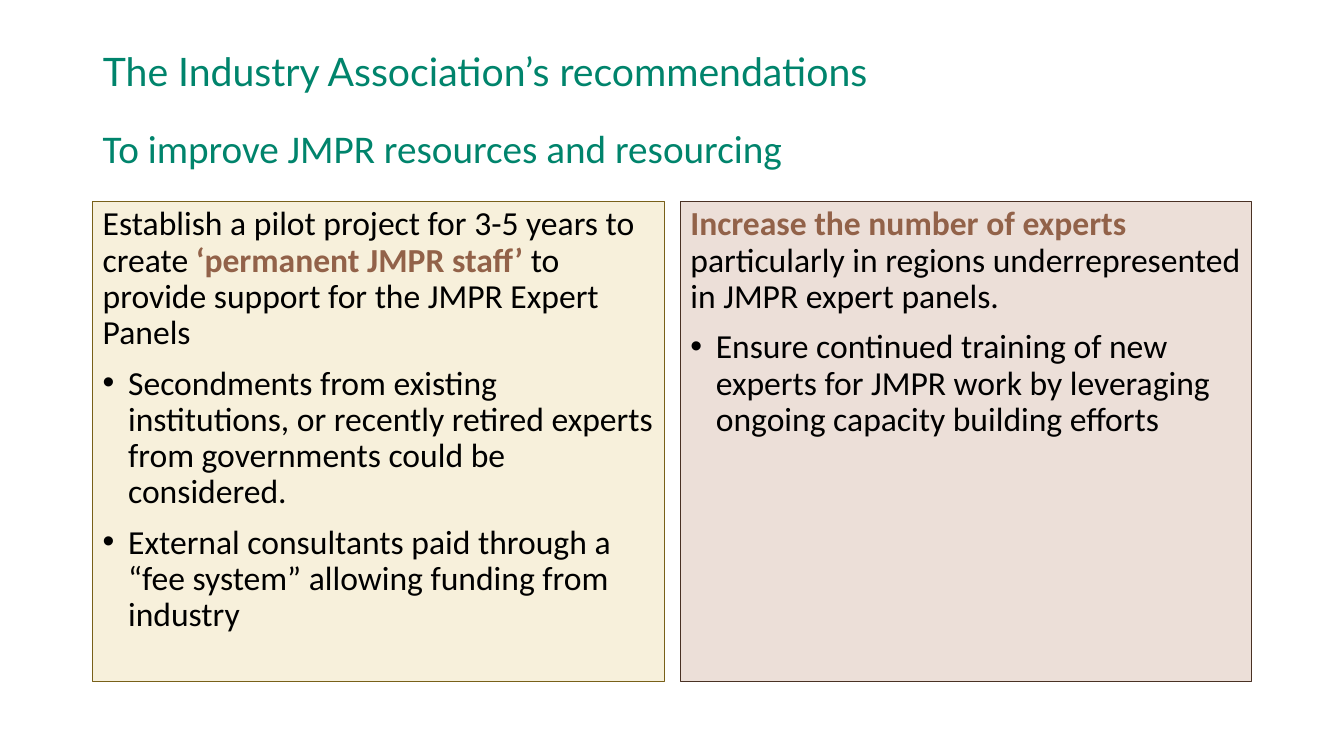
"""Build a slide of recommendations in two coloured panels."""
from dataclasses import dataclass

import lxml.etree
import pptx
import pptx.dml.color
import pptx.enum.shapes
import pptx.enum.text
import pptx.oxml.ns
import pptx.util
from pptx.util import Cm


@dataclass(frozen=True)
class Theme:
    heading_font: str = "Lato"
    body_font: str = "Calibri"
    heading_color: str = "00846C"
    text_color: str = "000000"
    accent_color: str = "926249"
    heading_size: int = 28
    body_size: int = 24
    paragraph_gap: int = 10
    border_width: float = 0.75


@dataclass(frozen=True)
class Run:
    text: str
    accent: bool = False


@dataclass(frozen=True)
class Paragraph:
    runs: tuple[Run, ...]
    bullet: bool = False


@dataclass(frozen=True)
class Panel:
    fill: str
    border: str
    paragraphs: tuple[Paragraph, ...]


THEME = Theme()
LEFT = Cm(2.34)
CONTENT_WIDTH = Cm(29.21)
PANEL_TOP = Cm(5.09)
PANEL_WIDTH = Cm(14.4)
PANEL_HEIGHT = Cm(12.08)
PANEL_STEP = CONTENT_WIDTH - PANEL_WIDTH
BULLET_INDENT = Cm(0.64)

TITLE = "The Industry Association’s recommendations"
SUBTITLE = "To improve JMPR resources and resourcing"
PANELS = (
    Panel("F7F0DB", "786019", (
        Paragraph((
            Run("Establish a pilot project for 3-5 years to create "),
            Run("‘permanent JMPR staff’", accent=True),
            Run(" to provide support for the JMPR Expert Panels"),
        )),
        Paragraph((Run("Secondments from existing institutions, or recently retired "
                       "experts from governments could be considered."),), bullet=True),
        Paragraph((Run("External consultants paid through a “fee system” allowing "
                       "funding from industry"),), bullet=True),
    )),
    Panel("ECDFD8", "493124", (
        Paragraph((
            Run("Increase the number of experts ", accent=True),
            Run("particularly in regions underrepresented in JMPR expert panels."),
        )),
        Paragraph((Run("Ensure continued training of new experts for JMPR work by "
                       "leveraging ongoing capacity building efforts"),), bullet=True),
    )),
)


def rgb(value: str) -> pptx.dml.color.RGBColor:
    """Convert a hexadecimal colour."""
    return pptx.dml.color.RGBColor.from_string(value)


def add_run(paragraph, text: str, font: str, size: int, color: str, bold: bool = False) -> None:
    """Append a formatted run to a paragraph."""
    run = paragraph.add_run()
    run.text = text
    run.font.name = font
    run.font.size = pptx.util.Pt(size)
    run.font.color.rgb = rgb(color)
    run.font.bold = bold


def set_bullet(paragraph) -> None:
    """Give a paragraph a hanging round bullet."""
    properties = paragraph._p.get_or_add_pPr()
    properties.set("marL", str(BULLET_INDENT))
    properties.set("indent", str(-BULLET_INDENT))
    font = lxml.etree.SubElement(properties, pptx.oxml.ns.qn("a:buFont"))
    font.set("typeface", "Arial")
    bullet = lxml.etree.SubElement(properties, pptx.oxml.ns.qn("a:buChar"))
    bullet.set("char", "•")


def add_title(slide) -> None:
    """Place and fill the title placeholder."""
    title = slide.shapes.title
    title.left, title.top, title.width, title.height = LEFT, Cm(0.89), Cm(22.96), Cm(1.93)
    frame = title.text_frame
    frame.word_wrap = True
    frame.vertical_anchor = pptx.enum.text.MSO_ANCHOR.MIDDLE
    paragraph = frame.paragraphs[0]
    paragraph.alignment = pptx.enum.text.PP_ALIGN.LEFT
    paragraph.line_spacing = 0.9
    add_run(paragraph, TITLE, THEME.heading_font, THEME.heading_size, THEME.heading_color)


def add_subtitle(slide) -> None:
    """Add the line below the title."""
    box = slide.shapes.add_textbox(LEFT, Cm(3.23), CONTENT_WIDTH, Cm(1.27))
    box.text_frame.word_wrap = True
    paragraph = box.text_frame.paragraphs[0]
    paragraph.line_spacing = 0.8
    add_run(paragraph, SUBTITLE, THEME.body_font, THEME.heading_size, THEME.heading_color)


def add_panel(slide, panel: Panel, left: int) -> None:
    """Draw a coloured panel with its paragraphs."""
    shape = slide.shapes.add_shape(pptx.enum.shapes.MSO_SHAPE.RECTANGLE,
                                   left, PANEL_TOP, PANEL_WIDTH, PANEL_HEIGHT)
    shape.shadow.inherit = False
    shape.fill.solid()
    shape.fill.fore_color.rgb = rgb(panel.fill)
    shape.line.color.rgb = rgb(panel.border)
    shape.line.width = pptx.util.Pt(THEME.border_width)
    frame = shape.text_frame
    frame.word_wrap = True
    frame.vertical_anchor = pptx.enum.text.MSO_ANCHOR.TOP
    for index, content in enumerate(panel.paragraphs):
        paragraph = frame.add_paragraph() if index else frame.paragraphs[0]
        paragraph.alignment = pptx.enum.text.PP_ALIGN.LEFT
        paragraph.line_spacing = 0.9
        if index:
            paragraph.space_before = pptx.util.Pt(THEME.paragraph_gap)
        if content.bullet:
            set_bullet(paragraph)
        for run in content.runs:
            color = THEME.accent_color if run.accent else THEME.text_color
            add_run(paragraph, run.text, THEME.body_font, THEME.body_size, color, run.accent)


def main() -> None:
    """Create and save the presentation."""
    presentation = pptx.Presentation()
    presentation.slide_width = Cm(33.87)
    presentation.slide_height = Cm(19.05)
    slide = presentation.slides.add_slide(presentation.slide_layouts.get_by_name("Title Only"))
    add_title(slide)
    for index, panel in enumerate(PANELS):
        add_panel(slide, panel, LEFT + index * PANEL_STEP)
    add_subtitle(slide)
    presentation.save("out.pptx")


if __name__ == "__main__":
    main()
